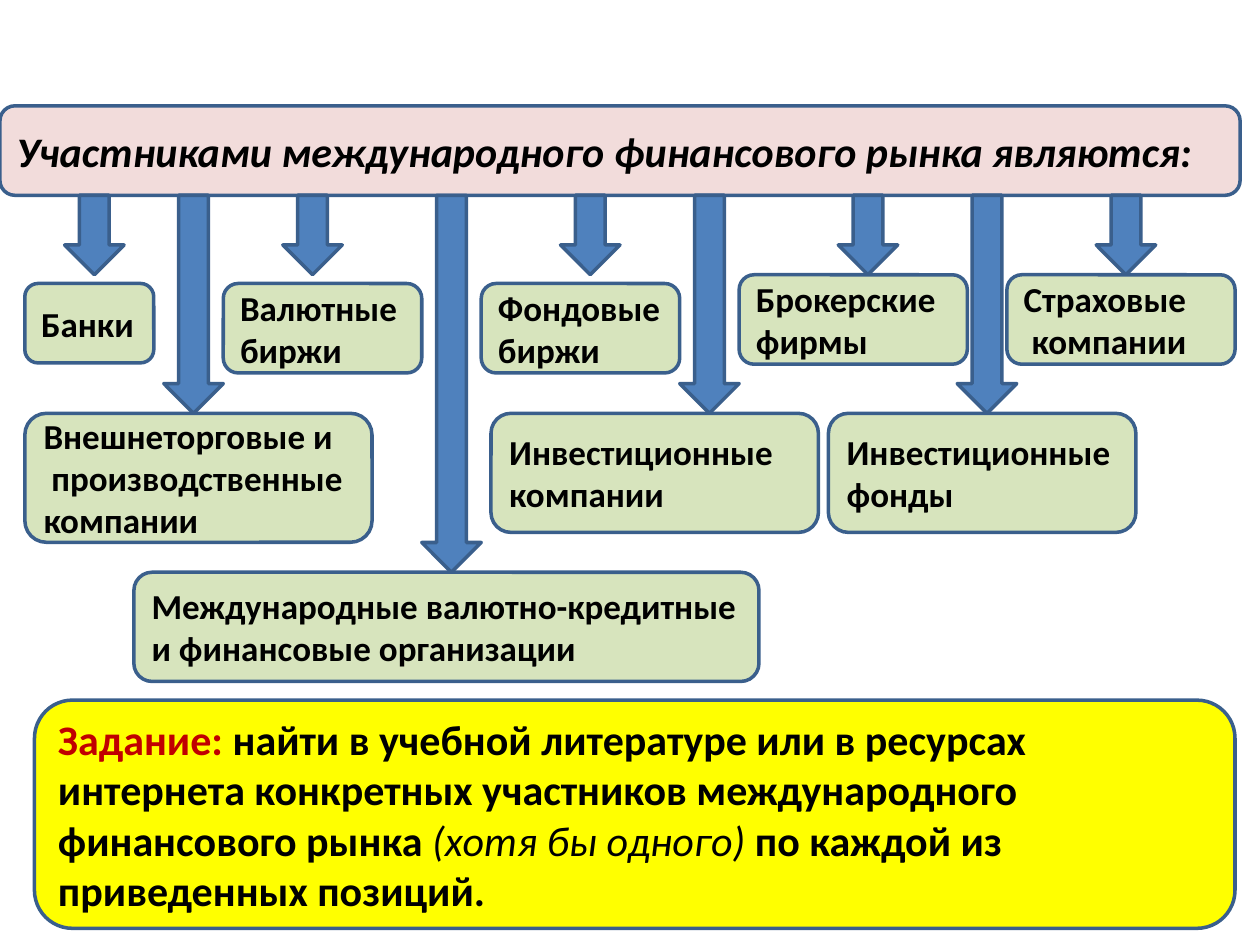
import pptx
import pptx.util
import pptx.dml.color
import pptx.enum.shapes
import pptx.enum.text

Pt = pptx.util.Pt
RGBColor = pptx.dml.color.RGBColor
SHAPE = pptx.enum.shapes.MSO_SHAPE

PINK = RGBColor(0xF2, 0xDC, 0xDB)
GREEN = RGBColor(0xD7, 0xE4, 0xBD)
YELLOW = RGBColor(0xFF, 0xFF, 0x00)
BLUE = RGBColor(0x4F, 0x81, 0xBD)
OUTLINE = RGBColor(0x3A, 0x5F, 0x8C)
BLACK = RGBColor(0, 0, 0)
RED = RGBColor(0xC0, 0, 0)

HEADING = "Участниками международного финансового рынка являются:"
TASK = [
    ("Задание:", {"color": RED}),
    (" найти в учебной литературе или в ресурсах интернета конкретных "
     "участников международного финансового рынка ", {}),
    ("(хотя бы одного) ", {"bold": False, "italic": True}),
    ("по каждой из приведенных позиций.", {}),
]

HEADING_BOX = (0, 60.5, 708.66, 51.1)
TASK_BOX = (19.7, 400.1, 686, 130.4)
ARROWS_TOP = 111.6
ARROW_WIDTH = 34
# Where the arrows of each row of participants end
UPPER, MIDDLE, LOWER = 157, 236.2, 327

# Paragraphs, arrow left, arrow end, box left, top, width, height
PARTICIPANTS = [
    (["Банки"], 36.9, UPPER, 14.2, 162, 73.7, 45.4),
    (["Валютные", "биржи"], 161.6, UPPER, 127.6, 162, 113.4, 51.1),
    (["Фондовые биржи"], 320.3, UPPER, 275, 162, 113.4, 51.1),
    (["Брокерские фирмы"], 479, UPPER, 422.4, UPPER, 130.4, 51.1),
    (["Страховые", " компании"], 626.4, UPPER, 575.4, UPPER, 130.4, 51.1),
    (["Внешнеторговые и", " производственные", "компании"],
     93.6, MIDDLE, 14.2, MIDDLE, 198.4, 73.7),
    (["Инвестиционные компании"], 388.4, MIDDLE, 280.6, MIDDLE, 187.1, 68),
    (["Инвестиционные фонды"], 547, MIDDLE, 473.4, MIDDLE, 175.7, 68),
    (["Международные валютно-кредитные", "и финансовые организации"],
     241, LOWER, 76.5, LOWER, 357.2, 62.4),
]


def add_outlined(slide, preset, box, fill):
    shape = slide.shapes.add_shape(preset, *(Pt(length) for length in box))
    shape.shadow.inherit = False
    shape.fill.solid()
    shape.fill.fore_color.rgb = fill
    shape.line.color.rgb = OUTLINE
    shape.line.width = Pt(2)
    return shape


def add_run(paragraph, text, size=20, color=BLACK, bold=True, italic=False):
    run = paragraph.add_run()
    run.text = text
    run.font.name = "Calibri"
    run.font.size = Pt(size)
    run.font.color.rgb = color
    run.font.bold = bold
    run.font.italic = italic


def add_box(slide, box, fill, paragraphs, **text_format):
    """Rounded box; each paragraph is a list of (text, format) runs."""
    frame = add_outlined(slide, SHAPE.ROUNDED_RECTANGLE, box, fill).text_frame
    frame.word_wrap = True
    frame.vertical_anchor = pptx.enum.text.MSO_ANCHOR.MIDDLE
    for index, runs in enumerate(paragraphs):
        paragraph = frame.add_paragraph() if index else frame.paragraphs[0]
        paragraph.alignment = pptx.enum.text.PP_ALIGN.LEFT
        for text, run_format in runs:
            add_run(paragraph, text, **{**text_format, **run_format})


def main():
    presentation = pptx.Presentation()
    presentation.slide_width = Pt(720)
    presentation.slide_height = Pt(540)
    slide = presentation.slides.add_slide(presentation.slide_layouts[6])

    add_box(slide, HEADING_BOX, PINK, [[(HEADING, {})]], size=24, italic=True)
    add_box(slide, TASK_BOX, YELLOW, [TASK], size=24)
    for lines, arrow_left, arrow_end, *box in PARTICIPANTS:
        arrow = (arrow_left, ARROWS_TOP, ARROW_WIDTH, arrow_end - ARROWS_TOP)
        add_outlined(slide, SHAPE.DOWN_ARROW, arrow, BLUE)
        add_box(slide, box, GREEN, [[(line, {})] for line in lines])

    presentation.save("out.pptx")


if __name__ == "__main__":
    main()
